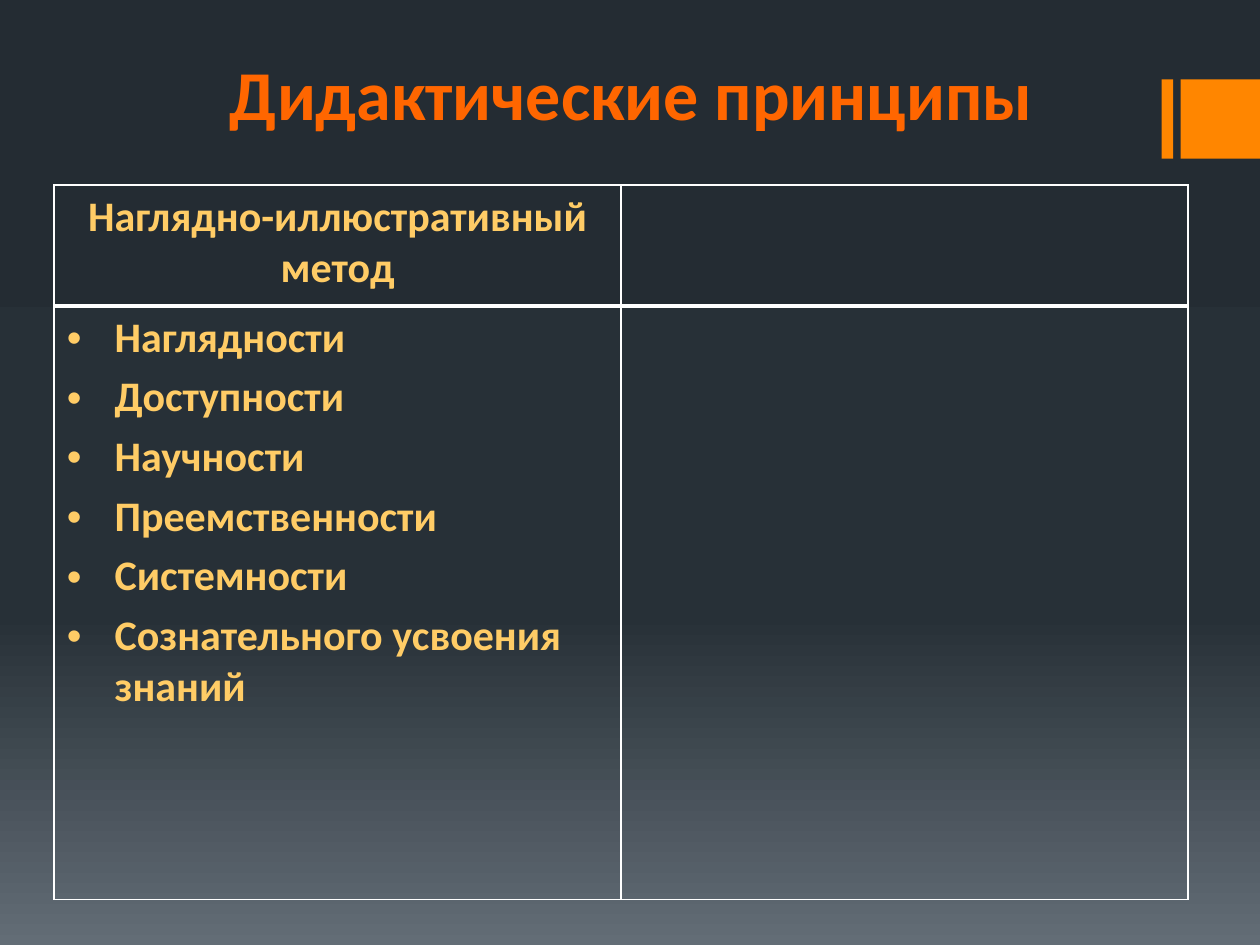
from copy import deepcopy

from lxml import etree
from pptx import Presentation
from pptx import util as u
from pptx.dml.color import RGBColor
from pptx.enum import shapes, text
from pptx.oxml.ns import qn

COLOURS = {
    "top": "242C33",
    "middle": "273037",
    "bottom": "636D76",
    "accent": "FF8600",
    "title": "FF6600",
    "body": "FFCC66",
    "border": "FFFFFF",
}
PRINCIPLES = [
    "Наглядности",
    "Доступности",
    "Научности",
    "Преемственности",
    "Системности",
    "Сознательного усвоения знаний",
]


def add_text(para, words, size, colour):
    span = para.add_run()
    span.text = words
    span.font.name = "Calibri"
    span.font.size = u.Pt(size)
    span.font.bold = True
    span.font.color.rgb = RGBColor.from_string(COLOURS[colour])


def set_borders(cell, widths):
    """Draw the cell's borders; widths maps the sides L, R, T, B to points."""
    properties = cell._tc.get_or_add_tcPr()
    for position, (side, width) in enumerate(widths.items()):
        line = etree.Element(qn(f"a:ln{side}"), w=str(u.Pt(width)))
        fill = etree.SubElement(line, qn("a:solidFill"))
        etree.SubElement(fill, qn("a:srgbClr"), val=COLOURS["border"])
        properties.insert(position, line)


deck = Presentation()
deck.slide_width = u.Inches(10)
deck.slide_height = u.Inches(7.5)
page = deck.slides.add_slide(deck.slide_layouts[6])

# Background: three stops from top to bottom
background = page.background.fill
background.gradient()
background.gradient_angle = 270
stop_list = page._element.find(".//" + qn("a:gsLst"))
stop_list.append(deepcopy(stop_list[-1]))
stops = [(0, "top"), (0.65, "middle"), (1, "bottom")]
for stop, (position, colour) in zip(background.gradient_stops, stops):
    stop.position = position
    stop.color.rgb = RGBColor.from_string(COLOURS[colour])

# Accent bars at the right edge
for left, width in [(9.22, 0.09), (9.37, 0.63)]:
    bar = page.shapes.add_shape(
        shapes.MSO_SHAPE.RECTANGLE,
        u.Inches(left), u.Inches(0.63), u.Inches(width), u.Inches(0.63),
    )
    bar.shadow.inherit = False
    bar.fill.solid()
    bar.fill.fore_color.rgb = RGBColor.from_string(COLOURS["accent"])
    bar.line.fill.background()

# Title
title = page.shapes.add_textbox(u.Inches(0.51), u.Inches(0.13), u.Inches(9), u.Inches(0.99))
title.text_frame.word_wrap = True
title.text_frame.vertical_anchor = text.MSO_ANCHOR.BOTTOM
para = title.text_frame.paragraphs[0]
para.alignment = text.PP_ALIGN.CENTER
add_text(para, "Дидактические принципы", 40, "title")

# Table
table = page.shapes.add_table(
    2, 2, u.Inches(0.43), u.Inches(1.47), u.Inches(9), u.Inches(5.67)
).table
table.first_row = False
table.horz_banding = False
for column in table.columns:
    column.width = u.Inches(4.5)
for row, height, top, bottom in zip(table.rows, (0.96, 4.71), (1, 3), (3, 1)):
    row.height = u.Inches(height)
    for cell in row.cells:
        cell.fill.background()
        set_borders(cell, {"L": 1, "R": 1, "T": top, "B": bottom})

para = table.cell(0, 0).text_frame.paragraphs[0]
para.alignment = text.PP_ALIGN.CENTER
add_text(para, "Наглядно-иллюстративный метод", 24, "body")

frame = table.cell(1, 0).text_frame
for number, principle in enumerate(PRINCIPLES):
    para = frame.add_paragraph() if number else frame.paragraphs[0]
    properties = para._p.get_or_add_pPr()
    properties.set("marL", str(u.Inches(0.38)))
    properties.set("indent", str(u.Inches(-0.38)))
    etree.SubElement(properties, qn("a:buFont"), typeface="Arial")
    etree.SubElement(properties, qn("a:buChar"), char="•")
    if number:
        para.space_before = u.Pt(4.8)
    add_text(para, principle, 24, "body")

deck.save("out.pptx")
